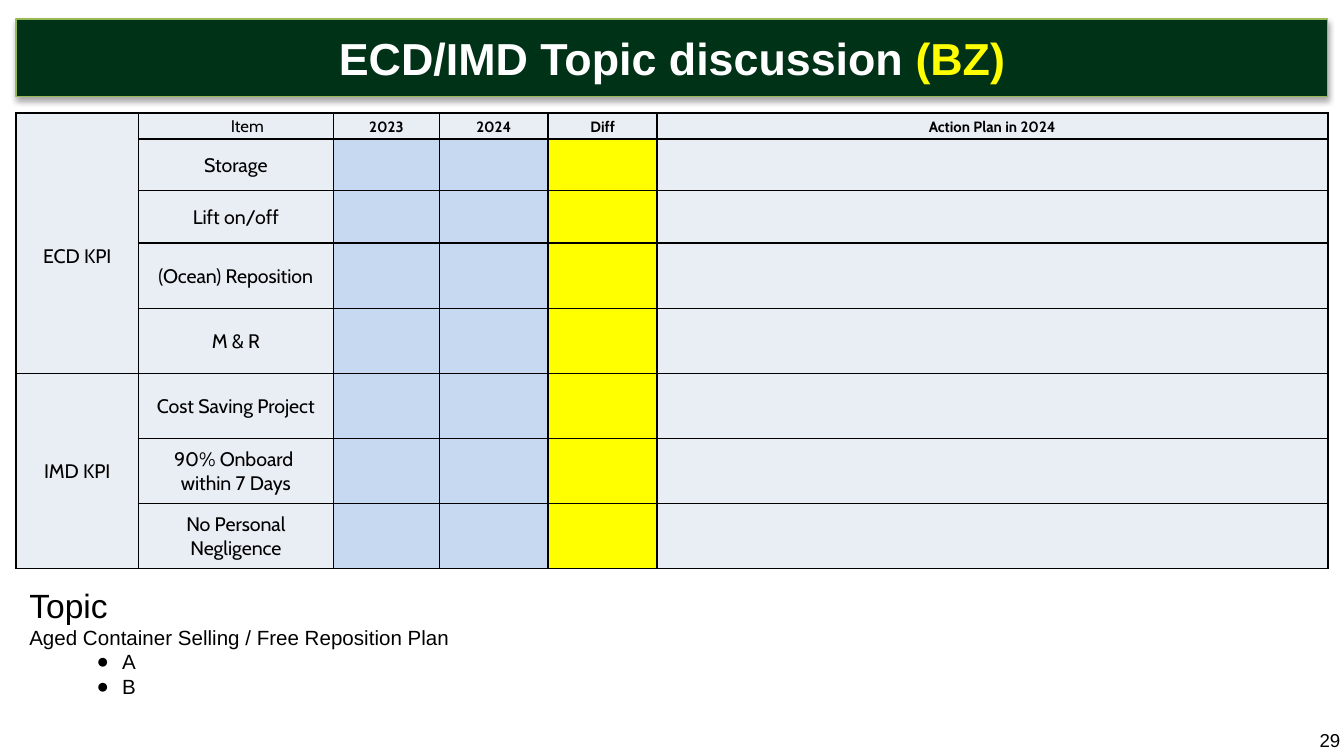
import pptx
import pptx.util
import pptx.dml.color
import pptx.enum.text
import pptx.oxml
import pptx.oxml.ns

ALIGN = pptx.enum.text.PP_ALIGN
MIDDLE = pptx.enum.text.MSO_ANCHOR.MIDDLE
NS = pptx.oxml.ns.nsdecls("a")


def rgb(value):
    return pptx.dml.color.RGBColor.from_string(value)


def xml(markup):
    """Parse one element; the first tag takes the drawing namespace."""
    cut = markup.index(" ")
    return pptx.oxml.parse_xml(markup[:cut] + " " + NS + markup[cut:])


class Slide:
    """Style and current slide; lengths are grid units of 0.1 inch."""
    INK, PALE, BLUE, YELLOW = "000000", "E9EDF4", "C6D9F1", "FFFF00"
    GREEN, LIME, WHITE = "003217", "98B955", "FFFFFF"
    BODY, TABLE = "Arial", "Cabin"

    def __init__(self, prs):
        self.s = prs.slides.add_slide(prs.slide_layouts[5])

    def grid(self, *units):
        return [pptx.util.Inches(u / 10) for u in units]

    def font(self, r, size, name=BODY, color=INK, bold=False):
        r.font.size, r.font.name, r.font.bold = pptx.util.Pt(size), name, bold
        r.font.color.rgb = rgb(color)

    def banner(self, box, runs):
        sp = self.s.shapes.title
        sp.left, sp.top, sp.width, sp.height = self.grid(*box)
        sp.fill.solid()
        sp.fill.fore_color.rgb = rgb(self.GREEN)
        sp.line.color.rgb = rgb(self.LIME)
        sp.line.width = pptx.util.Pt(0.75)
        sp._element.spPr.append(xml(
            '<a:effectLst ><a:outerShdw blurRad="39370" dist="22860" dir="5400000">'
            '<a:srgbClr val="000000"><a:alpha val="35000"/></a:srgbClr>'
            '</a:outerShdw></a:effectLst>'))
        tf = sp.text_frame
        tf.auto_size = pptx.enum.text.MSO_AUTO_SIZE.NONE
        tf.vertical_anchor = MIDDLE
        tf.margin_left = tf.margin_top = tf.margin_right = tf.margin_bottom = 0
        p = tf.paragraphs[0]
        p.alignment = ALIGN.CENTER
        for text, color in runs:
            r = p.add_run()
            r.text = text
            self.font(r, 24, color=color, bold=True)

    def cell(self, cell, text, fill, size=10.5, bold=False, left=0.1, top=0.1):
        cell.text = text
        cell.vertical_anchor = MIDDLE
        (cell.margin_left, cell.margin_top,
         cell.margin_right, cell.margin_bottom) = self.grid(left, top, 0.1, 0)
        for p in cell.text_frame.paragraphs:
            p.alignment = ALIGN.CENTER
            for r in p.runs:
                self.font(r, size, self.TABLE, bold=bold)
        tcPr = cell._tc.get_or_add_tcPr()
        for side in "LRTB":
            tcPr.append(xml(f'<a:ln{side} w="12700"><a:solidFill><a:srgbClr '
                            f'val="{self.INK}"/></a:solidFill></a:ln{side}>'))
        cell.fill.solid()
        cell.fill.fore_color.rgb = rgb(fill)

    def table(self, x, y, cols, rows, header, groups):
        box = self.grid(x, y, sum(cols), sum(rows))
        tbl = self.s.shapes.add_table(len(rows), len(cols), *box).table
        for lines, sizes, attr in ((tbl.columns, cols, "width"),
                                   (tbl.rows, rows, "height")):
            for line, size in zip(lines, self.grid(*sizes)):
                setattr(line, attr, size)
        # Header row
        self.cell(tbl.cell(0, 1), header[0], self.PALE, 9, left=1.8)
        for col, text in enumerate(header[1:], 2):
            self.cell(tbl.cell(0, col), text, self.PALE, 8, True)
        # Item rows with their empty value cells
        items = [item for _, _, _, names in groups for item in names]
        fills = [self.PALE, self.BLUE, self.BLUE, self.YELLOW, self.PALE]
        for row, item in enumerate(items, 1):
            for col, fill in enumerate(fills, 1):
                self.cell(tbl.cell(row, col), item if col == 1 else "", fill)
        # Merged group labels
        for name, start, top, names in groups:
            end = items.index(names[-1]) + 1
            for row in range(start, end + 1):
                self.cell(tbl.cell(row, 0), name if row == start else "",
                          self.PALE, top=top if row == start else 0.1)
            tbl.cell(start, 0).merge(tbl.cell(end, 0))

    def text(self, box, lines):
        """Lines are (text, size, is_bullet)."""
        tf = self.s.shapes.add_textbox(*self.grid(*box)).text_frame
        tf.word_wrap = True
        tf.text = "\n".join(text for text, _, _ in lines)
        for p, (_, size, bullet) in zip(tf.paragraphs, lines):
            self.font(p.runs[0], size)
            if bullet:
                p.level = 1
                pPr = p._p.get_or_add_pPr()
                indent, hang = self.grid(6.9, -1.9)
                pPr.set("marL", str(indent))
                pPr.set("indent", str(hang))
                pPr.append(xml(f'<a:buFont typeface="{self.BODY}"/>'))
                pPr.append(xml('<a:buChar char="●"/>'))
        return tf


def main():
    prs = pptx.Presentation()
    prs.slide_width = pptx.util.Inches(10)
    prs.slide_height = prs.slide_width * 9 // 16
    s = Slide(prs)

    # Title banner
    s.banner((1.2, 1.4, 97.6, 5.8),
             [("ECD/IMD Topic discussion ", s.WHITE), ("(BZ)", s.YELLOW)])

    # KPI table: group name, first row, top margin, items
    s.table(1.2, 8.43, [9.1, 14.5, 7.9, 8.1, 8.1, 49.9],
            [1.9, 3.85, 3.93] + [4.84] * 5,
            ["Item", "2023", "2024", "Diff", "Action Plan in 2024"],
            [("ECD KPI", 0, 2, ["Storage", "Lift on/off",
                                "(Ocean) Reposition", "M & R"]),
             ("IMD KPI", 5, 0.1, ["Cost Saving Project",
                                  "90% Onboard \nwithin 7 Days",
                                  "No Personal Negligence"])])

    # Topic notes
    s.text((1.2, 43, 97.6, 13.25),
           [("Topic", 18, False),
            ("Aged Container Selling / Free Reposition Plan", 11, False),
            ("A", 11, True), ("B", 11, True)])

    # Page number
    tf = s.text((97.2, 53.9, 2.8, 2.3), [("29", 10, False)])
    tf.vertical_anchor = MIDDLE
    tf.margin_right = 0

    prs.save("out.pptx")


if __name__ == "__main__":
    main()
